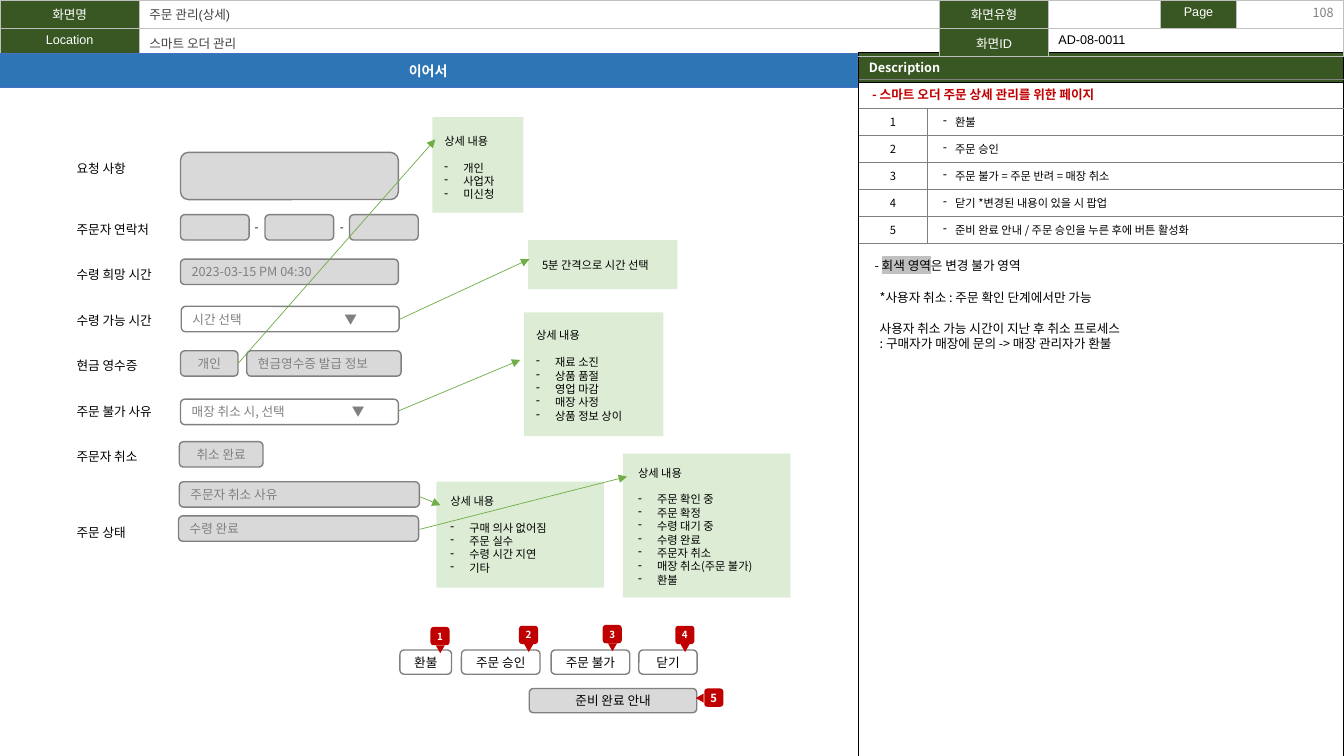
import pptx
import pptx.dml.color
import pptx.enum.shapes
import pptx.enum.text
import pptx.oxml.ns
import pptx.util
from lxml import etree

Cm = pptx.util.Cm
Pt = pptx.util.Pt
SHAPE = pptx.enum.shapes.MSO_SHAPE
ALIGN = pptx.enum.text.PP_ALIGN
ANCHOR = pptx.enum.text.MSO_ANCHOR


def color(value):
    return pptx.dml.color.RGBColor.from_string(value)


def add_xml(parent, tag, **attributes):
    return etree.SubElement(parent, pptx.oxml.ns.qn(tag), attributes)


def write(paragraph, text, size=9, fill="000000", bold=False, font="Noto Sans CJK KR",
          highlight=None, align=None, before=None, bullet=None, tab=None):
    """Add one run to the paragraph; bullet (indent) and tab are in centimetres."""
    if align is not None:
        paragraph.alignment = align
    if before is not None:
        paragraph.space_before = Pt(before)
    if bullet:
        properties = paragraph._p.get_or_add_pPr()
        properties.set("marL", str(Cm(bullet)))
        properties.set("indent", str(-Cm(bullet)))
        add_xml(properties, "a:buChar", char="-")
    if tab:
        tabs = add_xml(paragraph._p.get_or_add_pPr(), "a:tabLst")
        add_xml(tabs, "a:tab", pos=str(Cm(tab)), algn="l")
    if not text:
        add_xml(paragraph._p, "a:endParaRPr", sz=str(size * 100))
        return
    run = paragraph.add_run()
    run.text = text
    run.font.size, run.font.bold = Pt(size), bold
    run.font.color.rgb = color(fill)
    properties = run._r.get_or_add_rPr()
    if highlight:
        add_xml(add_xml(properties, "a:highlight"), "a:srgbClr", val=highlight)
    run.font.name = font
    add_xml(properties, "a:ea", typeface="Noto Sans CJK KR")


class Screen:
    WHITE, GRAY, LIGHT = "FFFFFF", "808080", "D9D9D9"
    DARK_GREEN, GREEN, RED = "385723", "70AD47", "C00000"

    def __init__(self, slide):
        self.slide = slide

    def shape(self, kind, left, top, width, height, fill, line=None, shapes=None):
        shapes = shapes or self.slide.shapes
        shape = shapes.add_shape(kind, Cm(left), Cm(top), Cm(width), Cm(height))
        shape.shadow.inherit = False
        shape.fill.solid()
        shape.fill.fore_color.rgb = color(fill)
        if line:
            shape.line.color.rgb = color(line)
            shape.line.width = Pt(1)
        else:
            shape.line.fill.background()
        return shape

    def label(self, shape, text, **style):
        """Write centred text into a shape, without insets."""
        frame = shape.text_frame
        frame.margin_left = frame.margin_right = frame.margin_top = frame.margin_bottom = 0
        frame.vertical_anchor = ANCHOR.MIDDLE
        write(frame.paragraphs[0], text, align=ALIGN.CENTER, **style)

    def field(self, left, top, width, text="", height=0.64, fill=LIGHT, tab=None):
        shape = self.shape(SHAPE.ROUNDED_RECTANGLE, left, top, width, height, fill, self.GRAY)
        shape.text_frame.vertical_anchor = ANCHOR.MIDDLE
        write(shape.text_frame.paragraphs[0], text, fill=self.GRAY, align=ALIGN.LEFT, tab=tab)

    def button(self, left, top, width, text, height=0.61, fill=WHITE, text_fill="000000"):
        shape = self.shape(SHAPE.ROUNDED_RECTANGLE, left, top, width, height, fill, self.GRAY)
        self.label(shape, text, fill=text_fill)

    def marker(self, left, top, number, size=7, pointer=(0.13, 0.46), rotation=180):
        """Numbered badge with a small triangle that points at a button."""
        shapes = self.slide.shapes.add_group_shape().shapes
        triangle = self.shape(SHAPE.ISOSCELES_TRIANGLE, left + pointer[0], top + pointer[1],
                              0.23, 0.2, self.RED, shapes=shapes)
        triangle.rotation = rotation
        badge = self.shape(SHAPE.ROUNDED_RECTANGLE, left, top, 0.48, 0.46, self.RED,
                           shapes=shapes)
        self.label(badge, number, size=size, fill=self.WHITE, bold=True)

    def textbox(self, left, top, width, height):
        box = self.slide.shapes.add_textbox(Cm(left), Cm(top), Cm(width), Cm(height))
        box.text_frame.word_wrap = True
        return box.text_frame

    def callout(self, left, top, width, height, inset, title, *items):
        shape = self.shape(SHAPE.RECTANGLE, left, top, width, height, self.GREEN)
        tint = shape._element.spPr.find(".//" + pptx.oxml.ns.qn("a:srgbClr"))
        add_xml(tint, "a:alpha", val="23000")
        frame = shape.text_frame
        frame.margin_left, frame.margin_top = [Cm(value) for value in inset]
        frame.margin_right = 0
        frame.vertical_anchor = ANCHOR.TOP
        write(frame.paragraphs[0], title, size=8, align=ALIGN.LEFT)
        for index, item in enumerate(items):
            write(frame.add_paragraph(), item, size=8, align=ALIGN.LEFT,
                  before=0 if index else 9.6, bullet=0.48)

    def arrow(self, *ends):
        connector = self.slide.shapes.add_connector(
            pptx.enum.shapes.MSO_CONNECTOR.STRAIGHT, *[Cm(value) for value in ends])
        connector.line.color.rgb = color(self.GREEN)
        connector.line.width = Pt(0.5)
        add_xml(connector.line._get_or_add_ln(), "a:tailEnd", type="triangle")
        add_xml(connector._element.spPr, "a:effectLst")

    def table(self, left, top, columns, rows):
        table = self.slide.shapes.add_table(len(rows), len(columns), Cm(left), Cm(top),
                                            Cm(sum(columns)), Cm(sum(rows))).table
        table.first_row = table.horz_banding = False
        for column, width in zip(table.columns, columns):
            column.width = Cm(width)
        for row, height in zip(table.rows, rows):
            row.height = Cm(height)
        return table

    def cell(self, cell, text, border, width, sides="LRTB", fill=None, anchor=ANCHOR.TOP,
             text_fill="000000", **style):
        write(cell.text_frame.paragraphs[0], text, fill=text_fill, **style)
        cell.vertical_anchor = anchor
        properties = cell._tc.get_or_add_tcPr()
        for side in "LRTB":
            line = add_xml(properties, "a:ln" + side, w=str(Pt(width)))
            if side in sides:
                add_xml(add_xml(line, "a:solidFill"), "a:srgbClr", val=border)
            else:
                add_xml(line, "a:noFill")
        if fill:
            cell.fill.solid()
            cell.fill.fore_color.rgb = color(fill)
        else:
            cell.fill.background()


def add_tables(screen):
    panel = screen.table(21.64, 1.32, [12.22], [0.76, 16.97])
    screen.cell(panel.cell(0, 0), "Description", "000000", 0.5, fill=screen.DARK_GREEN,
                text_fill=screen.WHITE, bold=True)
    screen.cell(panel.cell(1, 0), "", "000000", 0.5)

    features = ["환불", "주문 승인", "주문 불가 = 주문 반려 = 매장 취소",
                "닫기 *변경된 내용이 있을 시 팝업", "준비 완료 안내 / 주문 승인을 누른 후에 버튼 활성화"]
    steps = screen.table(21.64, 2.01, [1.73, 10.49], [0.68] * 6)
    steps.cell(0, 0).merge(steps.cell(0, 1))
    gray, middle = screen.GRAY, ANCHOR.MIDDLE
    screen.cell(steps.cell(0, 0), "- 스마트 오더 주문 상세 관리를 위한 페이지", gray, 0.75, "TB",
                anchor=middle, text_fill=screen.RED, bold=True)
    steps.cell(0, 0).margin_left = Cm(0.34)
    for row, feature in enumerate(features, 1):
        screen.cell(steps.cell(row, 0), str(row), gray, 0.75, "TBR", anchor=middle, size=8,
                    align=ALIGN.CENTER)
        screen.cell(steps.cell(row, 1), feature, gray, 0.75, "LTB", anchor=middle, size=8,
                    bullet=0.3)
        steps.cell(row, 1).margin_left = Cm(0.4)

    rows = [["화면명", "주문 관리(상세)", "화면유형", "", "Page", ""],
            ["Location", "스마트 오더 관리", "화면ID", "AD-08-0011", "", ""]]
    header = screen.table(0, 0, [3.51, 20.17, 2.74, 2.82, 1.93, 2.69], [0.71, 0.69])
    header.cell(1, 3).merge(header.cell(1, 5))
    for row, texts in enumerate(rows):
        for column, text in enumerate(texts):
            is_label = column in (0, 2, 4) and text != ""
            text_fill = screen.WHITE if is_label else "404040" if column == 1 else "000000"
            screen.cell(header.cell(row, column), text, "BFBFBF", 1, text_fill=text_fill,
                        fill=screen.DARK_GREEN if is_label else None, font="Arial",
                        align=ALIGN.CENTER if is_label else ALIGN.LEFT)
    number = screen.textbox(26.24, -0.2, 7.62, 1.02)
    number.vertical_anchor = ANCHOR.MIDDLE
    write(number.paragraphs[0], "108", fill=gray, align=ALIGN.RIGHT)


def add_form(screen):
    labels = screen.textbox(1.68, 3.94, 2.84, 9.88)
    write(labels.paragraphs[0], "요청 사항")
    for text, blank_lines in [("주문자 연락처", 3), ("수령 희망 시간", 2), ("수령 가능 시간", 2),
                              ("현금 영수증", 2), ("주문 불가 사유", 2), ("주문자 취소", 2),
                              ("주문 상태", 4)]:
        write(labels.add_paragraph(), text, before=10.8 * blank_lines)

    screen.field(4.55, 3.84, 5.49, height=1.19)
    for part in range(3):
        screen.field(4.55 + 2.13 * part, 5.41, 1.73)
    for gap in range(2):
        dash = screen.textbox(6.2 + 2.15 * gap, 5.42, 0.53, 0.61)
        dash.margin_left = dash.margin_right = 0
        write(dash.paragraphs[0], "-", size=8, align=ALIGN.CENTER)
    screen.field(4.55, 6.53, 5.49, "2023-03-15 PM 04:30")
    screen.field(4.57, 7.72, 5.49, "시간 선택\t▼", fill=screen.WHITE, tab=3.83)
    screen.button(4.55, 8.84, 1.45, "개인", 0.64, screen.LIGHT, screen.GRAY)
    screen.field(6.22, 8.84, 3.89, "현금영수증 발급 정보")
    screen.field(4.55, 10.06, 5.49, "매장 취소 시, 선택\t▼", fill=screen.WHITE, tab=4.04)
    screen.button(4.52, 11.13, 2.11, "취소 완료", 0.64, screen.LIGHT, screen.GRAY)
    screen.field(4.52, 12.14, 6.05, "주문자 취소 사유")
    screen.field(4.5, 13, 6.05, "수령 완료")

    banner = screen.shape(SHAPE.RECTANGLE, -0.03, 1.35, 21.64, 0.86, "2E75B6", "4472C4")
    screen.label(banner, "이어서", size=10, fill=screen.WHITE, bold=True)
    for left, width, text in [(10.08, 1.3, "환불"), (11.63, 1.98, "주문 승인"),
                              (13.89, 1.98, "주문 불가"), (16.1, 1.47, "닫기")]:
        screen.button(left, 16.38, width, text)
    screen.button(13.34, 17.35, 4.22, "준비 완료 안내", fill=screen.LIGHT)
    for number, (left, top) in enumerate([(10.85, 15.8), (13.08, 15.77), (15.19, 15.75),
                                          (17.02, 15.77)], 1):
        screen.marker(left, top, str(number))
    screen.marker(17.75, 17.35, "5", size=8, pointer=(-0.23, 0.14), rotation=270)


def add_callouts(screen):
    for ends in [(10.03, 10.36, 13.11, 9.07), (10.06, 8.05, 13.34, 6.53),
                 (5.99, 9.17, 10.97, 3.51), (10.59, 12.52, 11.1, 12.73)]:
        screen.arrow(*ends)
    screen.callout(10.9, 2.95, 2.29, 2.41, (0.3, 0.43), "상세 내용", "개인", "사업자", "미신청")
    screen.callout(13.21, 7.87, 3.51, 3.12, (0.3, 0.41), "상세 내용", "재료 소진", "상품 품절",
                   "영업 마감", "매장 사정", "상품 정보 상이")
    screen.callout(13.31, 6.05, 3.76, 1.24, (0.35, 0.46), "5분 간격으로 시간 선택")
    screen.callout(11, 12.14, 4.22, 2.67, (0.35, 0.31), "상세 내용", "구매 의사 없어짐", "주문 실수",
                   "수령 시간 지연", "기타")
    screen.arrow(10.57, 13.34, 15.8, 12.01)
    screen.callout(15.7, 11.43, 4.22, 3.63, (0.38, 0.31), "상세 내용", "주문 확인 중", "주문 확정",
                   "수령 대기 중", "수령 완료", "주문자 취소", "매장 취소(주문 불가)", "환불")


def add_notes(screen):
    legend = screen.textbox(21.79, 6.38, 4.95, 0.64).paragraphs[0]
    write(legend, "- ")
    write(legend, "회색 영역", highlight="C0C0C0")
    write(legend, "은 변경 불가 영역")
    policy = screen.textbox(21.92, 7.19, 10.67, 2.18)
    write(policy.paragraphs[0], "*사용자 취소 : 주문 확인 단계에서만 가능")
    write(policy.add_paragraph(), "사용자 취소 가능 시간이 지난 후 취소 프로세스", before=10.8)
    write(policy.add_paragraph(), ": 구매자가 매장에 문의 -> 매장 관리자가 환불")


def main():
    presentation = pptx.Presentation()
    presentation.slide_width, presentation.slide_height = Cm(33.87), Cm(19.05)
    screen = Screen(presentation.slides.add_slide(presentation.slide_layouts[6]))
    add_tables(screen)
    add_form(screen)
    add_callouts(screen)
    add_notes(screen)
    presentation.save("out.pptx")


if __name__ == "__main__":
    main()
